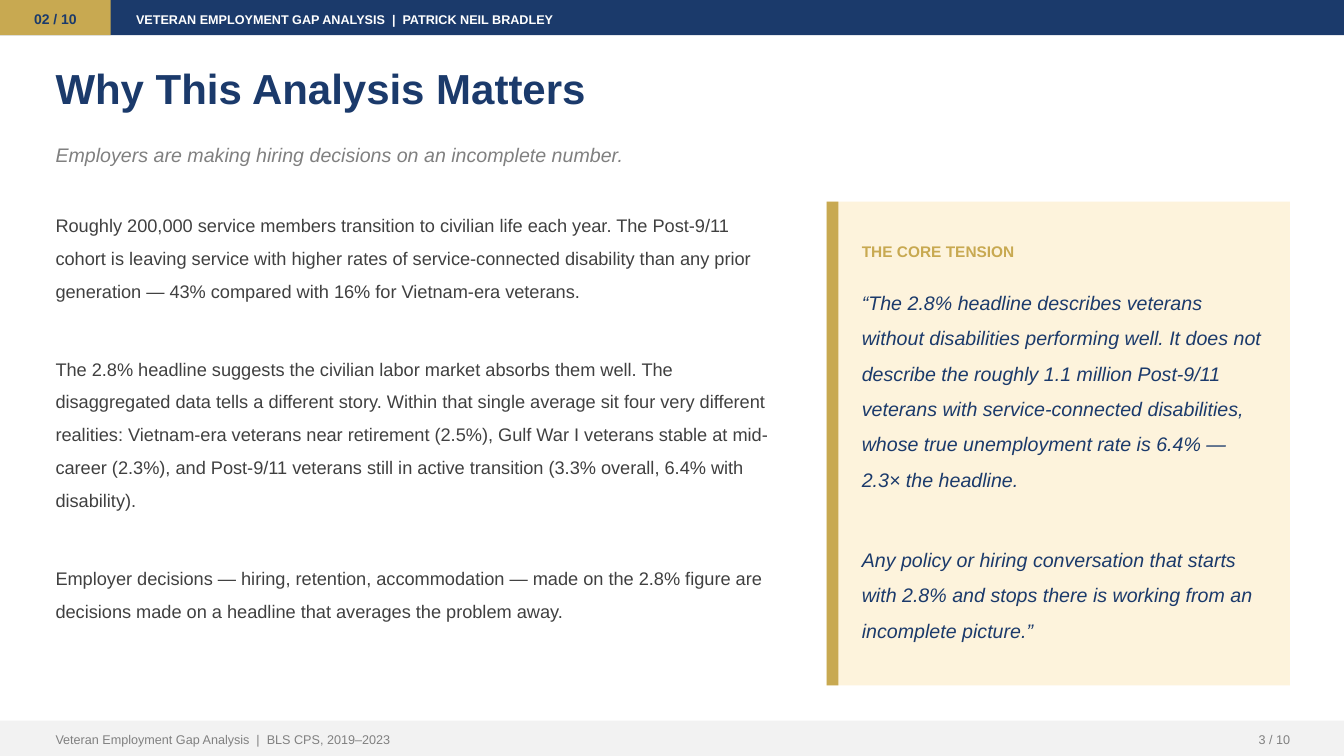
"""Build the "Why This Analysis Matters" slide of the veteran employment deck."""
from pptx import Presentation
from pptx import util as u
from pptx.dml import color
from pptx.enum import shapes, text

NAVY, GOLD, CREAM, GRAY = "1B3A6B", "C8A951", "FDF3DC", "808080"
WIDTH, HEIGHT, BAR, MARGIN = 33.87, 19.05, 0.89, 1.27
FOOT = HEIGHT - BAR
TOP, MID = text.MSO_ANCHOR.TOP, text.MSO_ANCHOR.MIDDLE
LEFT, CENTER, RIGHT = text.PP_ALIGN.LEFT, text.PP_ALIGN.CENTER, text.PP_ALIGN.RIGHT


def rgb(value):
    return color.RGBColor.from_string(value)


def add_text(box, paragraphs, size, fill, bold=False, italic=False,
             spacing=1.2, anchor=TOP, align=LEFT):
    tf = s.shapes.add_textbox(*map(u.Cm, box)).text_frame
    tf.word_wrap = True
    tf.auto_size = text.MSO_AUTO_SIZE.SHAPE_TO_FIT_TEXT
    tf.vertical_anchor = anchor
    tf.margin_left = tf.margin_right = u.Cm(0.13)
    tf.margin_top = tf.margin_bottom = u.Cm(0.05)
    for i, line in enumerate(paragraphs):
        p = tf.add_paragraph() if i else tf.paragraphs[0]
        p.text = line
        p.alignment = align
        p.line_spacing = spacing
        if i:
            p.space_before = u.Pt(32.3)
        p.font.name, p.font.size = "Arial", u.Pt(size)
        p.font.bold, p.font.italic = bold, italic
        p.font.color.rgb = rgb(fill)


prs = Presentation()
prs.slide_width, prs.slide_height = u.Cm(WIDTH), u.Cm(HEIGHT)
s = prs.slides.add_slide(prs.slide_layouts[6])

for box, fill in [
    ((0, 0, WIDTH, BAR), NAVY),
    ((0, 0, 2.79, BAR), GOLD),
    ((20.83, 5.08, 11.68, 12.19), CREAM),
    ((20.83, 5.08, 0.3, 12.19), GOLD),
    ((0, FOOT, WIDTH, BAR), "F2F2F2"),
]:
    sp = s.shapes.add_shape(shapes.MSO_SHAPE.RECTANGLE, *map(u.Cm, box))
    sp.shadow.inherit = False
    sp.fill.solid()
    sp.fill.fore_color.rgb = rgb(fill)
    sp.line.fill.background()

add_text((0, 0, 2.79, BAR), ["02 / 10"], 10, NAVY, bold=True, anchor=MID, align=CENTER)
add_text((3.3, 0, 27.94, BAR), ["VETERAN EMPLOYMENT GAP ANALYSIS  |  PATRICK NEIL BRADLEY"],
         9, "FFFFFF", bold=True, anchor=MID)
add_text((MARGIN, 1.4, 31.24, 2.29), ["Why This Analysis Matters"],
         30, NAVY, bold=True, spacing=1.1)
add_text((MARGIN, 3.43, 31.24, 1.27),
         ["Employers are making hiring decisions on an incomplete number."],
         14, GRAY, italic=True)

add_text((MARGIN, 5.08, 18.29, 12.19), [
    "Roughly 200,000 service members transition to civilian life each year. The Post-9/11 "
    "cohort is leaving service with higher rates of service-connected disability than any "
    "prior generation — 43% compared with 16% for Vietnam-era veterans.",
    "The 2.8% headline suggests the civilian labor market absorbs them well. The "
    "disaggregated data tells a different story. Within that single average sit four very "
    "different realities: Vietnam-era veterans near retirement (2.5%), Gulf War I veterans "
    "stable at mid-career (2.3%), and Post-9/11 veterans still in active transition (3.3% "
    "overall, 6.4% with disability).",
    "Employer decisions — hiring, retention, accommodation — made on the 2.8% figure are "
    "decisions made on a headline that averages the problem away.",
], 13, "404040", spacing=1.5)

add_text((21.59, 5.97, 10.41, 1.02), ["THE CORE TENSION"], 11, GOLD, bold=True)
add_text((21.59, 6.99, 10.41, 9.65), [
    "“The 2.8% headline describes veterans without disabilities performing well. It does "
    "not describe the roughly 1.1 million Post-9/11 veterans with service-connected "
    "disabilities, whose true unemployment rate is 6.4% — 2.3× the headline.",
    "Any policy or hiring conversation that starts with 2.8% and stops there is working "
    "from an incomplete picture.”",
], 14, NAVY, italic=True, spacing=1.5)

add_text((MARGIN, FOOT, 20.32, BAR), ["Veteran Employment Gap Analysis  |  BLS CPS, 2019–2023"],
         9, GRAY, anchor=MID)
add_text((29.72, FOOT, 2.92, BAR), ["3 / 10"], 9, GRAY, anchor=MID, align=RIGHT)

prs.save("out.pptx")
